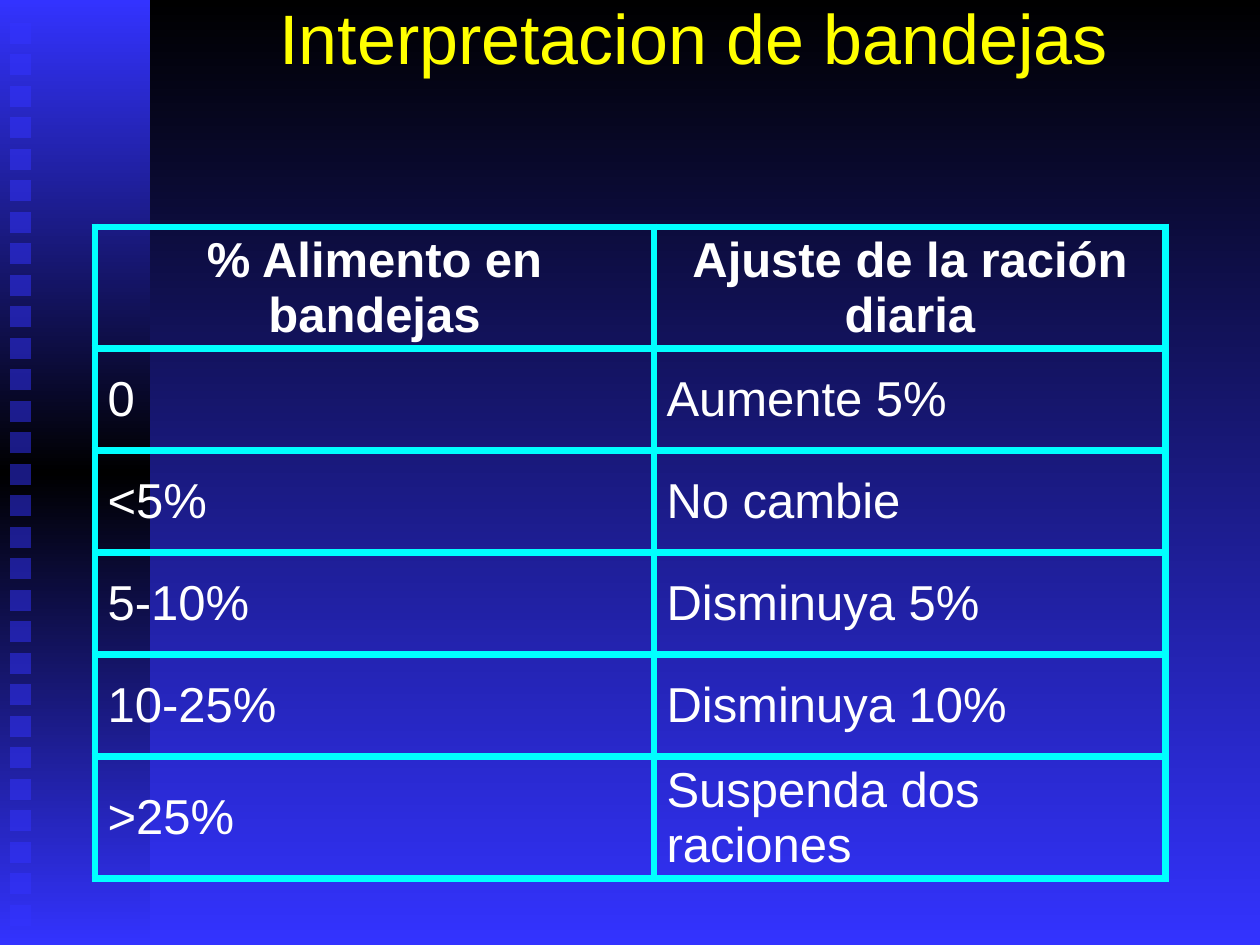
import copy
import dataclasses

import lxml.etree
import pptx
import pptx.dml.color
import pptx.dml.fill
import pptx.enum.shapes
import pptx.enum.text
import pptx.oxml.ns
import pptx.slide
import pptx.table
import pptx.text.text
import pptx.util

RGBColor = pptx.dml.color.RGBColor
PP_ALIGN = pptx.enum.text.PP_ALIGN
ANCHOR = pptx.enum.text.MSO_ANCHOR
qn = pptx.oxml.ns.qn

BLACK = RGBColor(0x00, 0x00, 0x00)
BLUE = RGBColor(0x33, 0x33, 0xFF)
CYAN = RGBColor(0x00, 0xFF, 0xFF)
WHITE = RGBColor(0xFF, 0xFF, 0xFF)
YELLOW = RGBColor(0xFF, 0xFF, 0x00)

FONT = "Arial"
PIXELS_PER_INCH = 126
SQUARE_COUNT = 29
COLUMN_WIDTHS = (559, 512)
ROW_HEIGHT = 102
BORDER_WIDTH = pptx.util.Pt(4.5)


@dataclasses.dataclass(frozen=True)
class Box:
    left: int
    top: int
    width: int
    height: int

    def emu(self) -> tuple[int, ...]:
        return tuple(px(value) for value in dataclasses.astuple(self))


@dataclasses.dataclass(frozen=True)
class TableRow:
    tray_food: str
    adjustment: str
    is_header: bool = False


BAND = Box(0, 0, 150, 945)
TITLE = Box(158, -42, 1071, 158)
TABLE = Box(95, 227, 1071, 669)
SQUARES = [Box(10, 23 + index * 63 // 2, 21, 21) for index in range(SQUARE_COUNT)]
ROWS = [
    TableRow("% Alimento en bandejas", "Ajuste de la ración diaria", True),
    TableRow("0", "Aumente 5%"),
    TableRow("<5%", "No cambie"),
    TableRow("5-10%", "Disminuya 5%"),
    TableRow("10-25%", "Disminuya 10%"),
    TableRow(">25%", "Suspenda dos raciones"),
]


def px(value: int) -> int:
    return round(value * 914400 / PIXELS_PER_INCH)


def paint_gradient(
    fill: pptx.dml.fill.FillFormat, element: lxml.etree._Element, colors: list[RGBColor]
) -> None:
    fill.gradient()
    fill.gradient_angle = 270
    stop_list = next(element.iter(qn("a:gsLst")))
    while len(stop_list) < len(colors):
        stop_list.append(copy.deepcopy(stop_list[-1]))
    for index, (stop, color) in enumerate(zip(fill.gradient_stops, colors)):
        stop.position = index / (len(colors) - 1)
        stop.color.rgb = color


def add_rectangle(slide: pptx.slide.Slide, box: Box):
    shape = slide.shapes.add_shape(pptx.enum.shapes.MSO_SHAPE.RECTANGLE, *box.emu())
    shape.shadow.inherit = False
    shape.line.fill.background()
    return shape


def add_square(slide: pptx.slide.Slide, box: Box) -> None:
    square = add_rectangle(slide, box)
    square.fill.solid()
    square.fill.fore_color.rgb = BLUE
    color = next(square.element.spPr.iter(qn("a:srgbClr")))
    lxml.etree.SubElement(color, qn("a:alpha"), val="50000")


def add_run(
    paragraph: pptx.text.text._Paragraph, text: str, size: int, color: RGBColor, bold: bool = False
) -> None:
    run = paragraph.add_run()
    run.text = text
    run.font.name = FONT
    run.font.size = pptx.util.Pt(size)
    run.font.bold = bold
    run.font.color.rgb = color


def add_title(slide: pptx.slide.Slide, text: str) -> None:
    title = slide.shapes.title
    title.left, title.top, title.width, title.height = TITLE.emu()
    title.text_frame.vertical_anchor = ANCHOR.MIDDLE
    title.text_frame.word_wrap = True
    paragraph = title.text_frame.paragraphs[0]
    paragraph.alignment = PP_ALIGN.CENTER
    add_run(paragraph, text, 40, YELLOW)


def fill_cell(cell: pptx.table._Cell, text: str, is_header: bool) -> None:
    cell.vertical_anchor = ANCHOR.MIDDLE
    properties = cell._tc.get_or_add_tcPr()
    for side in ("lnL", "lnR", "lnT", "lnB"):
        line = lxml.etree.SubElement(properties, qn(f"a:{side}"), w=str(BORDER_WIDTH))
        solid = lxml.etree.SubElement(line, qn("a:solidFill"))
        lxml.etree.SubElement(solid, qn("a:srgbClr"), val=str(CYAN))
    cell.fill.background()
    paragraph = cell.text_frame.paragraphs[0]
    paragraph.alignment = PP_ALIGN.CENTER if is_header else PP_ALIGN.LEFT
    spacing = lxml.etree.SubElement(paragraph._p.get_or_add_pPr(), qn("a:spcBef"))
    lxml.etree.SubElement(spacing, qn("a:spcPct"), val="20000")
    add_run(paragraph, text, 28, WHITE, is_header)


def add_ration_table(slide: pptx.slide.Slide, rows: list[TableRow]) -> None:
    frame = slide.shapes.add_table(len(rows), len(COLUMN_WIDTHS), *TABLE.emu())
    table = frame.table
    table.first_row = False
    table.horz_banding = False
    for column, width in zip(table.columns, COLUMN_WIDTHS):
        column.width = px(width)
    for index, row in enumerate(rows):
        table.rows[index].height = px(ROW_HEIGHT)
        fill_cell(table.cell(index, 0), row.tray_food, row.is_header)
        fill_cell(table.cell(index, 1), row.adjustment, row.is_header)
    frame.height = px(TABLE.height)


def main() -> None:
    presentation = pptx.Presentation()
    presentation.slide_width = px(1260)
    presentation.slide_height = px(945)
    slide = presentation.slides.add_slide(presentation.slide_layouts[5])
    paint_gradient(slide.background.fill, slide.element, [BLACK, BLUE])
    band = add_rectangle(slide, BAND)
    paint_gradient(band.fill, band.element, [BLUE, BLACK, BLUE])
    for square in SQUARES:
        add_square(slide, square)
    add_title(slide, "Interpretacion de bandejas")
    add_ration_table(slide, ROWS)
    presentation.save("out.pptx")


if __name__ == "__main__":
    main()
